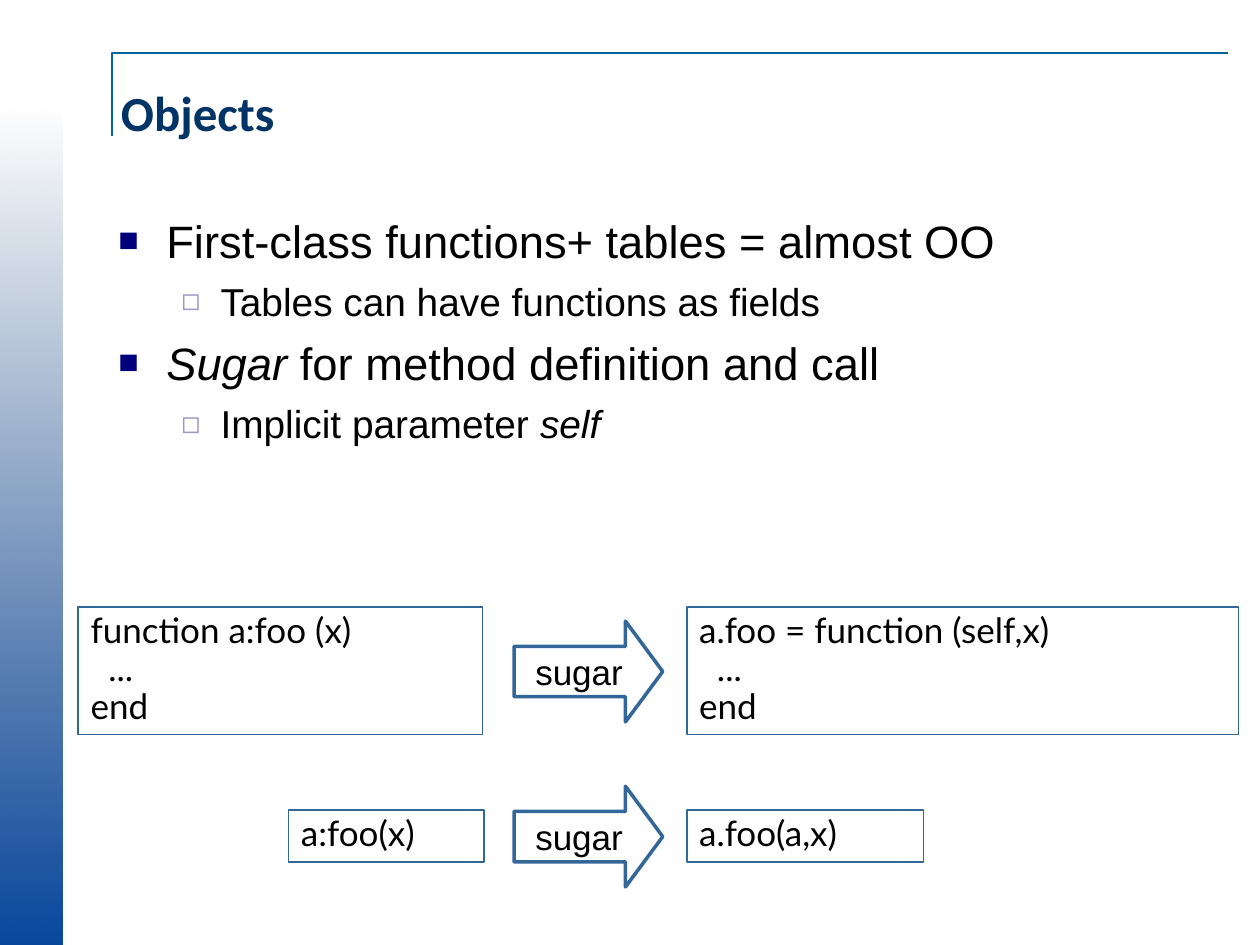
from lxml.etree import SubElement
from pptx import Presentation
from pptx.dml.color import RGBColor
from pptx.enum.shapes import MSO_SHAPE
from pptx.enum.text import MSO_ANCHOR, MSO_AUTO_SIZE, PP_ALIGN
from pptx.oxml.ns import qn
from pptx.util import Inches, Pt


def colour(code):
    return RGBColor.from_string(code)


def write(para, text, font="Arial", size=20, color="000000", bold=False,
          italic=False, align=PP_ALIGN.LEFT, spacing=None):
    para.alignment = align
    if spacing:
        para.line_spacing = spacing
    span = para.add_run()
    span.text = text
    span.font.name = font
    span.font.size = Pt(size)
    span.font.bold = bold
    span.font.italic = italic
    span.font.color.rgb = colour(color)


deck = Presentation()
deck.slide_width, deck.slide_height = Inches(10), Inches(7.5)
page = deck.slides.add_slide(deck.slide_layouts[1])
title, body = page.placeholders

# Side band, fading out upwards
band = page.shapes.add_shape(MSO_SHAPE.RECTANGLE, 0, Inches(0.84), Inches(0.5), Inches(6.66))
band.shadow.inherit = False
band.line.fill.background()
band.fill.gradient()
band.fill.gradient_angle = 90
for stop, code in zip(band.fill.gradient_stops, ("08479C", "063370")):
    stop.color.rgb = colour(code)
top_color = list(band.fill._xPr.iter(qn("a:srgbClr")))[-1]
SubElement(top_color, qn("a:alpha"), val="0")

# Title corner rule
builder = page.shapes.build_freeform(Inches(0.89), Inches(1.08))
builder.add_line_segments([(Inches(0.89), Inches(0.42)), (Inches(9.75), Inches(0.42))], close=False)
corner = builder.convert_to_shape()
corner.shadow.inherit = False
corner.fill.background()
corner.line.color.rgb = colour("006699")
corner.line.width = Pt(1.5)

# Title
title.left, title.top, title.width, title.height = map(Inches, (0.86, 0.42, 7.74, 0.94))
title.text_frame.vertical_anchor = MSO_ANCHOR.MIDDLE
write(title.text_frame.paragraphs[0], "Objects", font="Calibri", size=28,
      color="003366", bold=True)

# Bullet list: level, then (text, italic) spans
body.left, body.top, body.width, body.height = map(Inches, (0.84, 1.64, 8.91, 1.84))
body.text_frame.auto_size = MSO_AUTO_SIZE.NONE
# size, left margin, hanging indent, bullet, bullet colour, bullet percent
levels = [(25.9, 0.38, 0.38, "■", "00007D", 75), (22.2, 0.81, 0.31, "◻", "9999CC", 80)]
items = [
    (0, [("First-class functions+ tables = almost OO", False)]),
    (1, [("Tables can have functions as fields", False)]),
    (0, [("Sugar", True), (" for method definition and call", False)]),
    (1, [("Implicit parameter ", False), ("self", True)]),
]
for index, (level, spans) in enumerate(items):
    size, margin, hanging, bullet, bullet_color, percent = levels[level]
    para = body.text_frame.add_paragraph() if index else body.text_frame.paragraphs[0]
    para.level = level
    props = para._p.get_or_add_pPr()
    props.set("marL", str(Inches(margin)))
    props.set("indent", str(-Inches(hanging)))
    SubElement(SubElement(props, qn("a:buClr")), qn("a:srgbClr"), val=bullet_color)
    SubElement(props, qn("a:buSzPct"), val=str(percent * 1000))
    SubElement(props, qn("a:buChar"), char=bullet)
    para.space_before = Pt(6 if index else 0)
    for text, italic in spans:
        write(para, text, size=size, italic=italic)

# Code boxes
code_boxes = [
    (5.45, 6.43, 1.88, 0.41, ["a.foo(a,x)"]),
    (2.29, 6.43, 1.55, 0.41, ["a:foo(x)"]),
    (5.45, 4.82, 4.38, 1.01, ["a.foo = function (self,x)", "  ...", "end"]),
    (0.62, 4.82, 3.21, 1.01, ["function a:foo (x)", "  ...", "end"]),
]
for left, top, width, height, lines in code_boxes:
    box = page.shapes.add_shape(MSO_SHAPE.RECTANGLE, Inches(left), Inches(top),
                                Inches(width), Inches(height))
    box.shadow.inherit = False
    box.fill.background()
    box.line.color.rgb = colour("336699")
    box.line.width = Pt(1)
    frame = box.text_frame
    frame.word_wrap = True
    frame.vertical_anchor = MSO_ANCHOR.TOP
    for index, line in enumerate(lines):
        para = frame.add_paragraph() if index else frame.paragraphs[0]
        write(para, line, font="Lato", spacing=0.9)

# Sugar arrows
for top in (4.93, 6.24):
    arrow = page.shapes.add_shape(MSO_SHAPE.RIGHT_ARROW, Inches(4.08), Inches(top),
                                  Inches(1.18), Inches(0.8))
    arrow.adjustments[0], arrow.adjustments[1] = 0.5, 0.37
    arrow.shadow.inherit = False
    arrow.fill.background()
    arrow.line.color.rgb = colour("336699")
    arrow.line.width = Pt(2)
    arrow.text_frame.word_wrap = True
    arrow.text_frame.vertical_anchor = MSO_ANCHOR.MIDDLE
    write(arrow.text_frame.paragraphs[0], "sugar", align=PP_ALIGN.CENTER)

deck.save("out.pptx")
